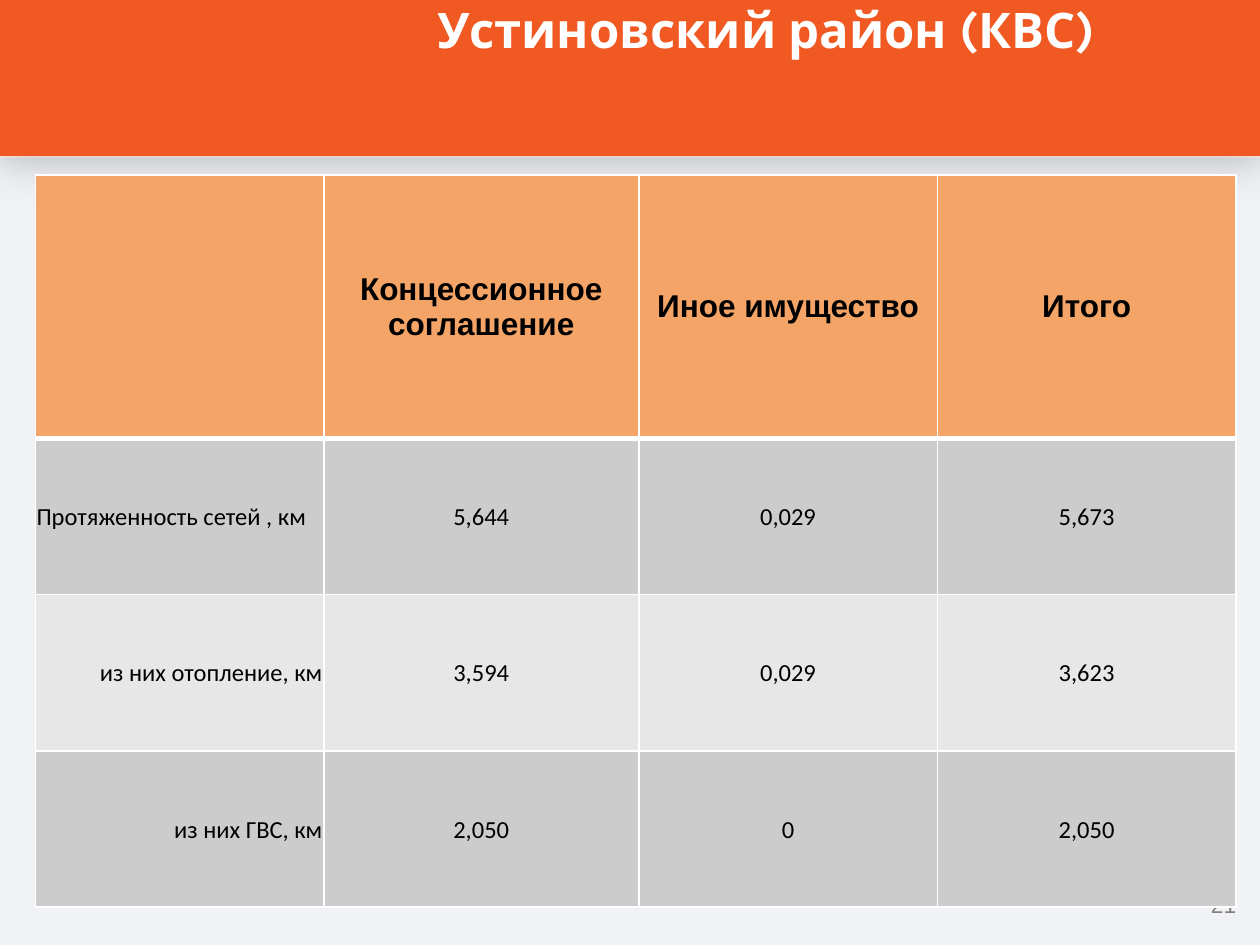
from lxml import etree
from pptx import Presentation
from pptx.dml.color import RGBColor
from pptx.enum.shapes import MSO_SHAPE
from pptx.enum.text import MSO_ANCHOR, PP_ALIGN
from pptx.oxml.ns import qn
from pptx.util import Inches, Pt

LEFT, CENTER, RIGHT = PP_ALIGN.LEFT, PP_ALIGN.CENTER, PP_ALIGN.RIGHT
MIDDLE = MSO_ANCHOR.MIDDLE
RECTANGLE = MSO_SHAPE.RECTANGLE

TITLE = "Устиновский район (КВС)"
PAGE_NUMBER = "21"
HEADER = ["", "Концессионное соглашение", "Иное имущество", "Итого"]
NETWORKS = [
    ("Протяженность сетей , км", LEFT, "5,644", "0,029", "5,673"),
    ("из них отопление, км", RIGHT, "3,594", "0,029", "3,623"),
    ("из них ГВС, км", RIGHT, "2,050", "0", "2,050"),
]

WIDTH, HEIGHT = 10, 7.5
COLUMN_WIDTHS = [2.29, 2.5, 2.37, 2.37]
ROW_HEIGHTS = [2.09] + [1.24] * len(NETWORKS)
BLACK, WHITE, ORANGE, PEACH = "000000", "FFFFFF", "F15922", "F4A467"
BAND_FILLS = ["CCCCCC", "E7E7E7"]


def color(value):
    return RGBColor.from_string(value)


def add_band(slide, top, height, fill, shadow=None):
    """Full-width rectangle; shadow is (opacity %, blur pt, distance pt)."""
    band = slide.shapes.add_shape(
        RECTANGLE, Inches(-0.01), Inches(top), Inches(WIDTH + 0.02), Inches(height))
    band.fill.solid()
    band.fill.fore_color.rgb = color(fill)
    band.line.fill.background()
    band.shadow.inherit = False
    if shadow:
        opacity, blur, distance = shadow
        effects = band._element.spPr.find(qn("a:effectLst"))
        outer = etree.SubElement(
            effects, qn("a:outerShdw"), blurRad=str(Pt(blur)), dist=str(Pt(distance)),
            dir="5400000", algn="ctr", rotWithShape="0")
        tint = etree.SubElement(outer, qn("a:srgbClr"), val=BLACK)
        etree.SubElement(tint, qn("a:alpha"), val=str(opacity * 1000))


def write(frame, text, align, size, font, ink, bold=False):
    paragraph = frame.paragraphs[0]
    paragraph.alignment = align
    run = paragraph.add_run()
    run.text = text
    run.font.size = Pt(size)
    run.font.name = font
    run.font.bold = bold
    run.font.color.rgb = color(ink)


def add_label(slide, box, *style):
    frame = slide.shapes.add_textbox(*map(Inches, box)).text_frame
    frame.word_wrap = True
    frame.margin_left = frame.margin_right = frame.margin_top = frame.margin_bottom = 0
    write(frame, *style)


def style_cell(cell, fill, top, bottom):
    """Fill a cell and rule it in white; top and bottom are line widths."""
    properties = cell._tc.get_or_add_tcPr()
    for side, width in (("L", 1), ("R", 1), ("T", top), ("B", bottom)):
        line = etree.SubElement(properties, qn(f"a:ln{side}"), w=str(Pt(width)))
        solid = etree.SubElement(line, qn("a:solidFill"))
        etree.SubElement(solid, qn("a:srgbClr"), val=WHITE)
    cell.fill.solid()
    cell.fill.fore_color.rgb = color(fill)
    cell.vertical_anchor = MIDDLE


def add_networks_table(slide):
    table = slide.shapes.add_table(
        len(ROW_HEIGHTS), len(COLUMN_WIDTHS), Inches(0.28), Inches(1.39),
        Inches(sum(COLUMN_WIDTHS)), Inches(sum(ROW_HEIGHTS))).table
    for column, width in zip(table.columns, COLUMN_WIDTHS):
        column.width = Inches(width)
    for row, height in zip(table.rows, ROW_HEIGHTS):
        row.height = Inches(height)

    for c, heading in enumerate(HEADER):
        cell = table.cell(0, c)
        style_cell(cell, PEACH, 1, 3)
        if heading:
            write(cell.text_frame, heading, CENTER, 18, "Arial", BLACK, True)

    for r, (name, name_align, *values) in enumerate(NETWORKS, 1):
        for c, text in enumerate([name, *values]):
            cell = table.cell(r, c)
            style_cell(cell, BAND_FILLS[(r - 1) % 2], 3 if r == 1 else 1, 1)
            cell.margin_left = cell.margin_right = cell.margin_top = Inches(0.01)
            cell.margin_bottom = 0
            write(cell.text_frame, text, CENTER if c else name_align, 14, "Calibri", BLACK)


def main():
    deck = Presentation()
    deck.slide_width, deck.slide_height = Inches(WIDTH), Inches(HEIGHT)
    slide = deck.slides.add_slide(deck.slide_layouts[6])
    add_band(slide, 0, HEIGHT, "F0F2F5")
    add_band(slide, -0.01, 1.26, WHITE, (8, 15, 1))
    add_band(slide, -0.02, 1.26, ORANGE, (17, 29, 3))
    add_label(slide, (9.32, 7.07, 0.49, 0.22), PAGE_NUMBER, RIGHT, 13, "Arial", "808080")
    add_label(slide, (2.17, 0, 7.83, 1.23), TITLE, CENTER, 28, "Karla", WHITE, True)
    add_networks_table(slide)
    deck.save("out.pptx")


if __name__ == "__main__":
    main()
